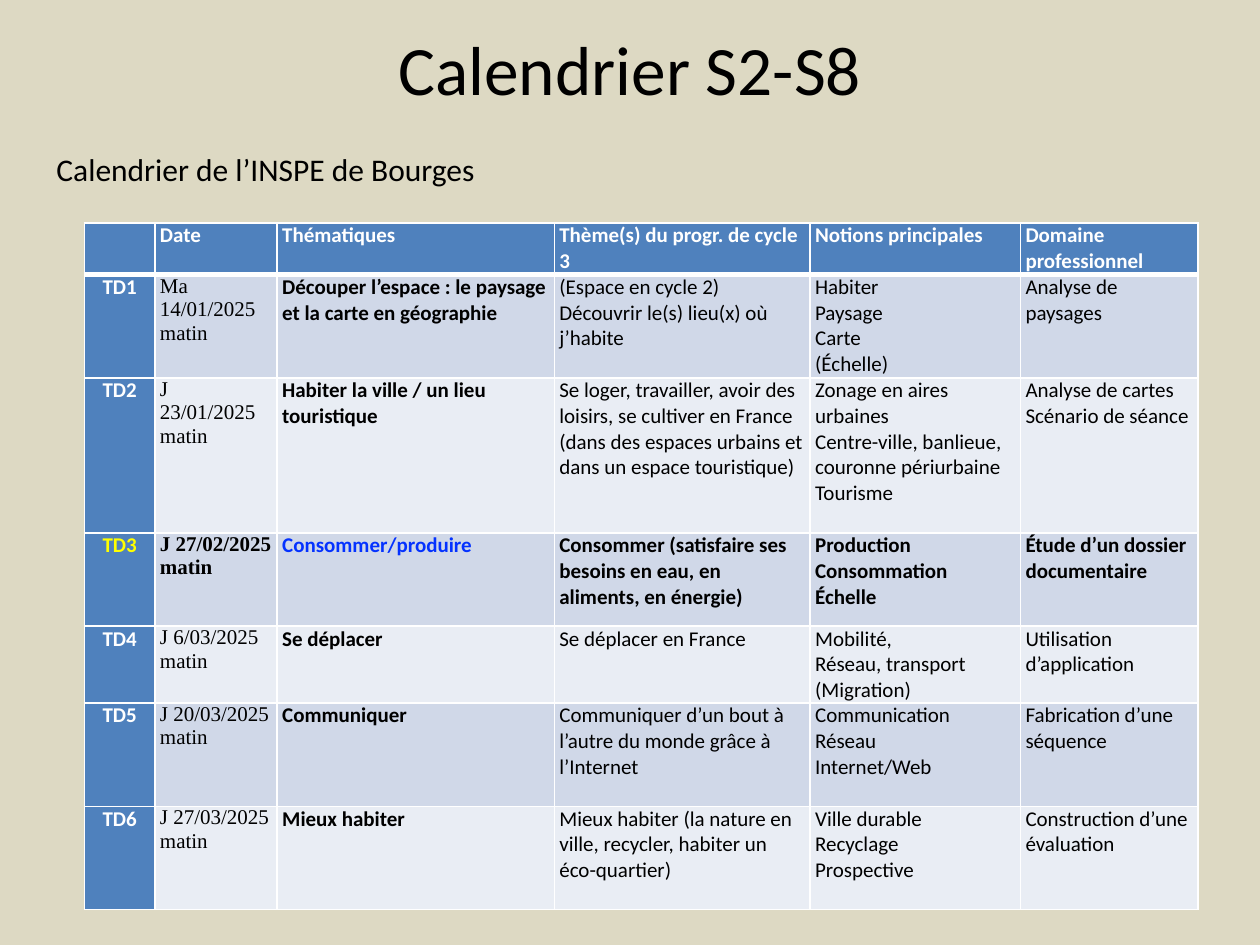
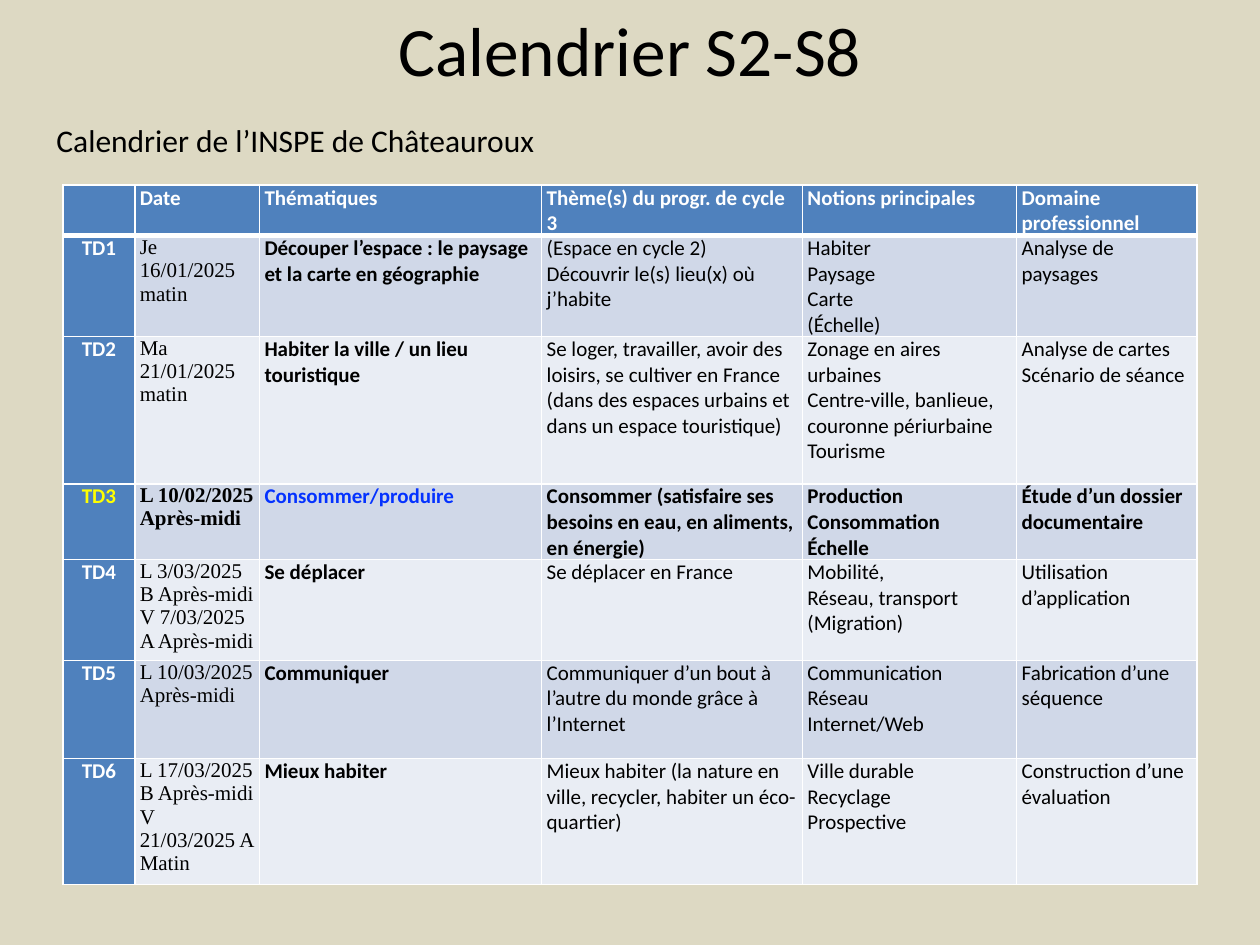
"""Build the two course calendars, one slide per training site."""
from dataclasses import dataclass

from lxml import etree
from pptx import Presentation
from pptx.dml.color import RGBColor
from pptx.enum.text import MSO_ANCHOR, MSO_AUTO_SIZE, PP_ALIGN
from pptx.oxml.ns import qn
from pptx.util import Inches, Pt

CENTER, LEFT = PP_ALIGN.CENTER, PP_ALIGN.LEFT
MIDDLE = MSO_ANCHOR.MIDDLE
NO_FIT, GROW = MSO_AUTO_SIZE.NONE, MSO_AUTO_SIZE.SHAPE_TO_FIT_TEXT
TITLE_ONLY = 5


@dataclass(frozen=True)
class Theme:
    background: str = "DDD9C3"
    header: str = "4F81BD"
    odd_row: str = "D0D8E8"
    even_row: str = "E9EDF4"
    border: str = "FFFFFF"
    light: str = "FFFFFF"
    dark: str = "000000"
    current_label: str = "FFFF00"
    current_topic: str = "0432FF"
    font: str = "Calibri"
    date_font: str = "Times New Roman"
    title_size: float = 39.6
    subtitle_size: float = 18
    table_size: float = 12


THEME = Theme()
CURRENT_SESSION = 3
TITLE = "Calendrier S2-S8"
HEADERS = ["", "Date", "Thématiques", "Thème(s) du progr. de cycle 3",
           "Notions principales", "Domaine professionnel"]
SESSIONS = [
    ("Découper l’espace : le paysage et la carte en géographie",
     "(Espace en cycle 2)\nDécouvrir le(s) lieu(x) où j’habite",
     "Habiter\nPaysage\nCarte\n(Échelle)",
     "Analyse de paysages"),
    ("Habiter la ville / un lieu touristique",
     "Se loger, travailler, avoir des loisirs, se cultiver en France "
     "(dans des espaces urbains et dans un espace touristique)",
     "Zonage en aires urbaines\nCentre-ville, banlieue, couronne périurbaine\nTourisme",
     "Analyse de cartes\nScénario de séance"),
    ("Consommer/produire",
     "Consommer (satisfaire ses besoins en eau, en aliments, en énergie)",
     "Production\nConsommation\nÉchelle",
     "Étude d’un dossier documentaire"),
    ("Se déplacer",
     "Se déplacer en France",
     "Mobilité,\nRéseau, transport\n(Migration)",
     "Utilisation d’application"),
    ("Communiquer",
     "Communiquer d’un bout à l’autre du monde grâce à l’Internet",
     "Communication\nRéseau\nInternet/Web",
     "Fabrication d’une séquence"),
    ("Mieux habiter",
     "Mieux habiter (la nature en ville, recycler, habiter un éco-quartier)",
     "Ville durable\nRecyclage\nProspective",
     "Construction d’une évaluation"),
]
CALENDARS = [
    {
        "subtitle": "Calendrier de l’INSPE de Bourges",
        "title_top": 0.16, "subtitle_top": 1.14, "subtitle_width": 3.56,
        "table_left": 0.67, "table_top": 1.77,
        "columns": [0.56, 0.97, 2.2, 2.03, 1.67, 1.41],
        "rows": [0.41, 0.82, 1.23, 0.74, 0.61, 0.82, 0.82],
        "dates": ["Ma 14/01/2025\nmatin", "J\n23/01/2025\nmatin", "J 27/02/2025\nmatin",
                  "J 6/03/2025\nmatin", "J 20/03/2025\nmatin", "J 27/03/2025\nmatin"],
    },
    {
        "subtitle": "Calendrier de l’INSPE de Châteauroux",
        "title_top": 0.01, "subtitle_top": 0.91, "subtitle_width": 4.04,
        "table_left": 0.5, "table_top": 1.47,
        "columns": [0.57, 0.99, 2.24, 2.07, 1.7, 1.43],
        "rows": [0.4, 0.8, 1.17, 0.6, 0.8, 0.78, 0.99],
        "dates": ["Je\n16/01/2025\nmatin", "Ma 21/01/2025\nmatin",
                  "L 10/02/2025\nAprès-midi",
                  "L 3/03/2025 B Après-midi\nV 7/03/2025 A Après-midi",
                  "L 10/03/2025\nAprès-midi",
                  "L 17/03/2025 B Après-midi\nV 21/03/2025 A Matin"],
    },
]


def write_text(text_frame, text, size, color=THEME.dark, font=THEME.font,
               bold=False, alignment=LEFT):
    """Write one paragraph per line of text."""
    for index, line in enumerate(text.split("\n")):
        paragraph = text_frame.paragraphs[0] if index == 0 else text_frame.add_paragraph()
        paragraph.alignment = alignment
        run = paragraph.add_run()
        run.text = line
        run.font.size = Pt(size)
        run.font.name = font
        run.font.bold = bold
        run.font.color.rgb = RGBColor.from_string(color)


def style_cell(cell, fill, top_width, bottom_width):
    """Set the margins, fill and four borders of a table cell."""
    cell.margin_left = cell.margin_right = Inches(0.04)
    cell.margin_top = cell.margin_bottom = 0
    cell.fill.solid()
    cell.fill.fore_color.rgb = RGBColor.from_string(fill)
    properties = cell._tc.get_or_add_tcPr()
    widths = {"a:lnL": 1, "a:lnR": 1, "a:lnT": top_width, "a:lnB": bottom_width}
    for position, (tag, width) in enumerate(widths.items()):
        line = etree.Element(qn(tag), w=str(Pt(width)))
        solid = etree.SubElement(line, qn("a:solidFill"))
        etree.SubElement(solid, qn("a:srgbClr"), val=THEME.border)
        properties.insert(position, line)


presentation = Presentation()
presentation.slide_width = Inches(10)
presentation.slide_height = Inches(7.5)
background = presentation.slide_master.background.fill
background.solid()
background.fore_color.rgb = RGBColor.from_string(THEME.background)

for calendar in CALENDARS:
    slide = presentation.slides.add_slide(presentation.slide_layouts[TITLE_ONLY])

    title = slide.shapes.title
    title.left, title.top = Inches(0.5), Inches(calendar["title_top"])
    title.width, title.height = Inches(9), Inches(0.75)
    title.text_frame.auto_size = NO_FIT
    title.text_frame.vertical_anchor = MIDDLE
    write_text(title.text_frame, TITLE, THEME.title_size, alignment=CENTER)

    subtitle = slide.shapes.add_textbox(
        Inches(0.35), Inches(calendar["subtitle_top"]),
        Inches(calendar["subtitle_width"]), Inches(0.4))
    subtitle.text_frame.word_wrap = False
    subtitle.text_frame.auto_size = GROW
    write_text(subtitle.text_frame, calendar["subtitle"], THEME.subtitle_size)

    columns, rows = calendar["columns"], calendar["rows"]
    table = slide.shapes.add_table(
        len(rows), len(columns),
        Inches(calendar["table_left"]), Inches(calendar["table_top"]),
        Inches(sum(columns)), Inches(sum(rows))).table
    table.horz_banding = False
    for column, width in zip(table.columns, columns):
        column.width = Inches(width)
    for row, height in zip(table.rows, rows):
        row.height = Inches(height)

    for column_index, header in enumerate(HEADERS):
        cell = table.cell(0, column_index)
        style_cell(cell, THEME.header, 1, 3)
        if header:
            write_text(cell.text_frame, header, THEME.table_size, THEME.light, bold=True)

    for number, (date, session) in enumerate(zip(calendar["dates"], SESSIONS), start=1):
        current = number == CURRENT_SESSION
        band = THEME.odd_row if number % 2 else THEME.even_row
        for column_index, text in enumerate((f"TD{number}", date, *session)):
            cell = table.cell(number, column_index)
            is_label, is_date, is_topic = (column_index == i for i in range(3))
            color = THEME.dark
            if is_label:
                color = THEME.current_label if current else THEME.light
            elif is_topic and current:
                color = THEME.current_topic
            style_cell(cell, THEME.header if is_label else band, 3 if number == 1 else 1, 1)
            write_text(cell.text_frame, text, THEME.table_size, color,
                       font=THEME.date_font if is_date else THEME.font,
                       bold=current or is_label or is_topic,
                       alignment=CENTER if is_label else LEFT)

presentation.save("out.pptx")
